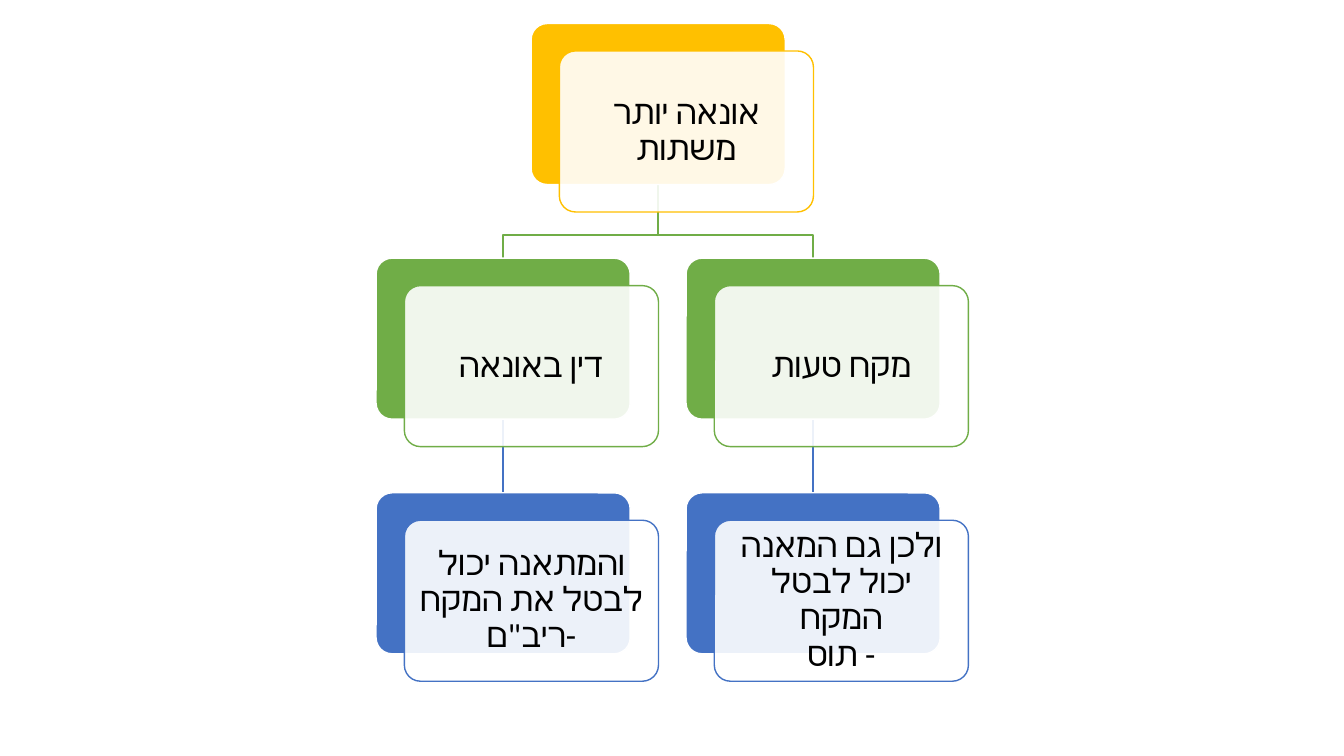
from dataclasses import dataclass

from lxml import etree
from pptx import Presentation
from pptx.dml.color import RGBColor
from pptx.enum.shapes import MSO_CONNECTOR, MSO_SHAPE
from pptx.enum.text import MSO_ANCHOR, PP_ALIGN
from pptx.oxml.ns import qn
from pptx.util import Pt

ROUNDED = MSO_SHAPE.ROUNDED_RECTANGLE
STRAIGHT = MSO_CONNECTOR.STRAIGHT
MIDDLE = MSO_ANCHOR.MIDDLE
CENTER = PP_ALIGN.CENTER


@dataclass(frozen=True)
class Theme:
    root: RGBColor = RGBColor(0xFF, 0xC0, 0x00)
    ruling: RGBColor = RGBColor(0x70, 0xAD, 0x47)
    outcome: RGBColor = RGBColor(0x44, 0x72, 0xC4)
    white: RGBColor = RGBColor(0xFF, 0xFF, 0xFF)
    text: RGBColor = RGBColor(0x00, 0x00, 0x00)
    font: str = "Calibri"
    size: float = 24
    line: float = 1


THEME = Theme()

# Tree geometry in points
SLIDE_WIDTH, SLIDE_HEIGHT = 960, 540
CARD_WIDTH, CARD_HEIGHT = 181.5, 115
SHIFT_X, SHIFT_Y = 20.2, 19.6
CENTER_X, HALF_GAP = 470.1, 110.7
FIRST_TOP, ROW_STEP = 16.8, 167.6
BRANCH_DROP = 36
CORNER = 0.1
INSET = 7.2

ROOT_TEXT = "אונאה יותר משתות"
# Each branch: side of the root, ruling, outcome
BRANCHES = [
    (1, "מקח טעות", "ולכן גם המאנה יכול לבטל המקח\n- תוס"),
    (-1, "דין באונאה", 'והמתאנה יכול לבטל את המקח -ריב"ם'),
]


def row_top(row):
    return FIRST_TOP + row * ROW_STEP


def style_line(shape, color):
    shape.line.color.rgb = color
    shape.line.width = Pt(THEME.line)


def add_straight_link(slide, x, top, bottom, color):
    link = slide.shapes.add_connector(STRAIGHT, Pt(x), Pt(top), Pt(x), Pt(bottom))
    style_line(link, color)
    etree.SubElement(link.element.spPr, qn("a:effectLst"))


def add_elbow_link(slide, start_x, end_x, top, bottom, color):
    bend = top + BRANCH_DROP
    points = [(Pt(x), Pt(y)) for x, y in
              [(start_x, bend), (end_x, bend), (end_x, bottom)]]
    builder = slide.shapes.build_freeform(Pt(start_x), Pt(top))
    builder.add_line_segments(points, close=False)
    link = builder.convert_to_shape()
    link.shadow.inherit = False
    link.fill.background()
    style_line(link, color)


def add_panel(slide, left, top, fill, line):
    panel = slide.shapes.add_shape(
        ROUNDED, Pt(left), Pt(top), Pt(CARD_WIDTH), Pt(CARD_HEIGHT))
    panel.adjustments[0] = CORNER
    panel.shadow.inherit = False
    panel.fill.solid()
    panel.fill.fore_color.rgb = fill
    style_line(panel, line)
    return panel


def make_translucent(panel, percent):
    color = panel.element.spPr.find(qn("a:solidFill")).find(qn("a:srgbClr"))
    etree.SubElement(color, qn("a:alpha"), val=str(percent * 1000))


def write_text(panel, text):
    frame = panel.text_frame
    frame.word_wrap = True
    frame.vertical_anchor = MIDDLE
    frame.margin_left = frame.margin_right = Pt(INSET)
    frame.margin_top = frame.margin_bottom = Pt(INSET)
    paragraph = frame.paragraphs[0]
    paragraph.alignment = CENTER
    paragraph.line_spacing = 0.9

    # Right-to-left direction and proportional space after
    properties = paragraph._p.get_or_add_pPr()
    properties.set("rtl", "1")
    space_after = etree.SubElement(properties, qn("a:spcAft"))
    etree.SubElement(space_after, qn("a:spcPct"), val="35000")

    for index, line in enumerate(text.split("\n")):
        if index:
            paragraph.add_line_break()
        run = paragraph.add_run()
        run.text = line
        run.font.size = Pt(THEME.size)
        run.font.name = THEME.font
        run.font.color.rgb = THEME.text
        etree.SubElement(run.font._element, qn("a:cs"), typeface=THEME.font)


def add_card(slide, center_x, row, text, color):
    left, top = center_x - CARD_WIDTH / 2, row_top(row)
    add_panel(slide, left, top, color, THEME.white)
    front = add_panel(slide, left + SHIFT_X, top + SHIFT_Y, THEME.white, color)
    make_translucent(front, 90)
    write_text(front, text)


def main():
    presentation = Presentation()
    presentation.slide_width = Pt(SLIDE_WIDTH)
    presentation.slide_height = Pt(SLIDE_HEIGHT)
    slide = presentation.slides.add_slide(presentation.slide_layouts[6])

    # Links lie behind the cards
    for side, _, _ in BRANCHES:
        x = CENTER_X + side * HALF_GAP
        add_elbow_link(slide, CENTER_X, x, row_top(0) + CARD_HEIGHT,
                       row_top(1), THEME.ruling)
        add_straight_link(slide, x, row_top(1) + CARD_HEIGHT,
                          row_top(2), THEME.outcome)

    # Cards
    add_card(slide, CENTER_X, 0, ROOT_TEXT, THEME.root)
    for side, ruling, outcome in BRANCHES:
        x = CENTER_X + side * HALF_GAP
        add_card(slide, x, 1, ruling, THEME.ruling)
        add_card(slide, x, 2, outcome, THEME.outcome)

    presentation.save("out.pptx")


if __name__ == "__main__":
    main()
